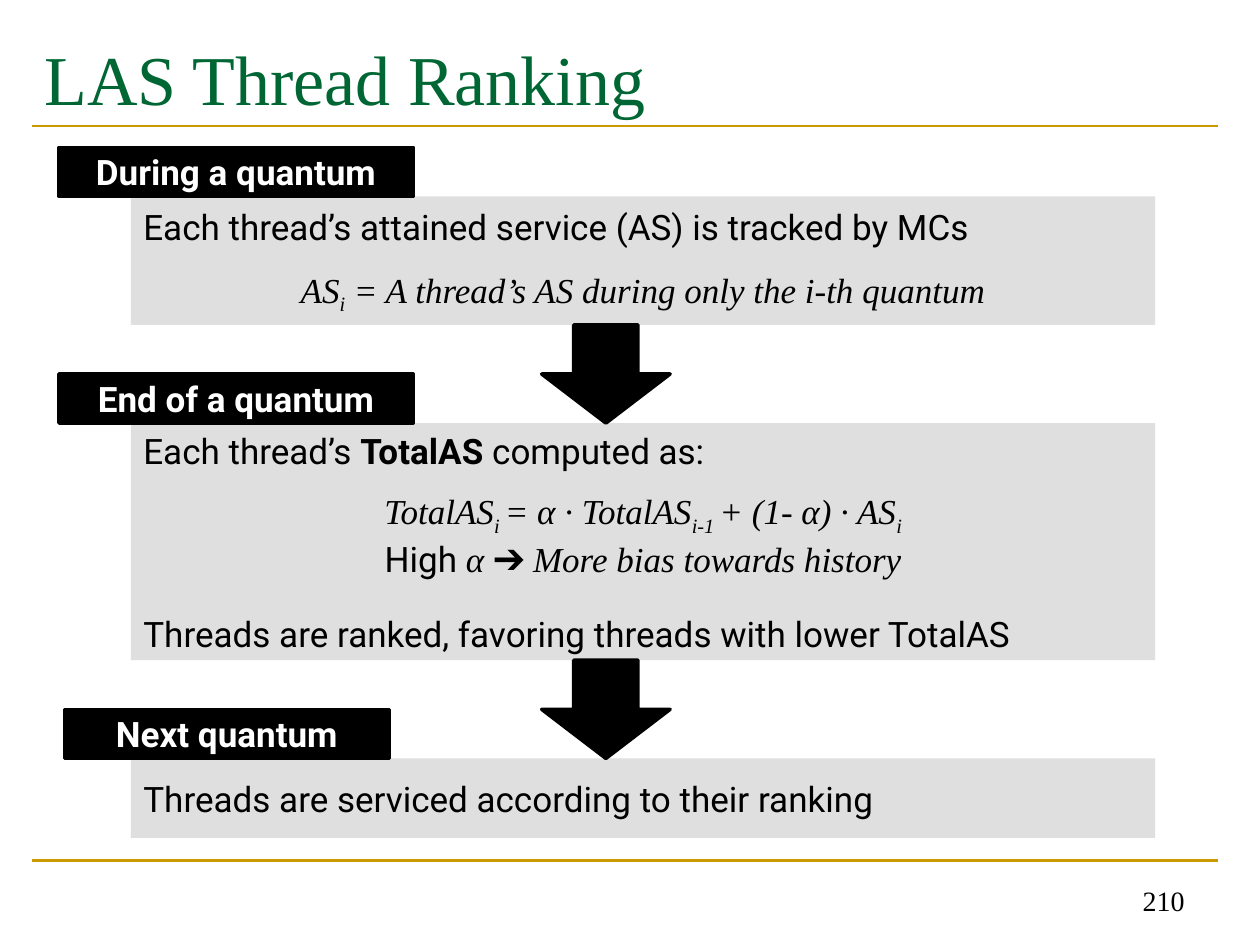
from dataclasses import dataclass

import pptx
import pptx.util
from pptx.dml.color import RGBColor
from pptx.enum.shapes import MSO_CONNECTOR, MSO_SHAPE
from pptx.enum.text import MSO_ANCHOR, PP_ALIGN
from pptx.oxml.ns import qn
from lxml import etree

Cm, Pt = pptx.util.Cm, pptx.util.Pt

BLACK = RGBColor(0x00, 0x00, 0x00)
WHITE = RGBColor(0xFF, 0xFF, 0xFF)
GREY = RGBColor(0xDF, 0xDF, 0xDF)
GREEN = RGBColor(0x00, 0x66, 0x33)
GOLD = RGBColor(0xCC, 0x99, 0x00)

SANS = {"name": "Roboto", "size": Pt(20)}
BOLD = SANS | {"bold": True}
MATH = {"name": "Times New Roman", "size": Pt(20), "italic": True}
SUB = MATH | {"baseline": -25000}

BOX_LEFT, BOX_WIDTH = 2.64, 20.65
LABEL_HEIGHT = 0.99
ARROW_LEFT, ARROW_WIDTH = 10.92, 2.59


@dataclass
class Para:
    runs: list[tuple[str, dict]]
    align: PP_ALIGN = PP_ALIGN.LEFT
    before: float = 0


@dataclass
class Stage:
    label: str
    label_left: float
    label_width: float
    top: float
    height: float
    paras: list[Para]

    @property
    def bottom(self) -> float:
        return self.top + self.height


STAGES = [
    Stage("During a quantum", 1.19, 7.14, 3.96, 2.59, [
        Para([("Each thread’s attained service (AS) is tracked by MCs", SANS)]),
        Para([("AS", MATH), ("i", SUB),
              (" = A thread’s AS during only the i-th quantum", MATH)],
             PP_ALIGN.CENTER, 11.7),
    ]),
    Stage("End of a quantum", 1.19, 7.14, 8.53, 4.78, [
        Para([("Each thread’s ", SANS), ("TotalAS ", BOLD), ("computed as:", SANS)]),
        Para([("TotalAS", MATH), ("i ", SUB), ("= α · TotalAS", MATH), ("i-1 ", SUB),
              ("+ (1- α) · AS", MATH), ("i", SUB)], PP_ALIGN.CENTER, 10.5),
        Para([("High ", SANS), ("α ➔ More bias towards history", MATH)],
             PP_ALIGN.CENTER),
        Para([("Threads are ranked, favoring threads with lower TotalAS", SANS)],
             before=18.8),
    ]),
    Stage("Next quantum", 1.3, 6.55, 15.29, 1.6, [
        Para([("Threads are serviced according to their ranking", SANS)]),
    ]),
]


def write(tf, paras: list[Para], color: RGBColor, anchor: MSO_ANCHOR) -> None:
    tf.word_wrap = True
    tf.vertical_anchor = anchor
    for i, para in enumerate(paras):
        p = tf.paragraphs[0] if i == 0 else tf.add_paragraph()
        p.alignment = para.align
        p.space_before = Pt(para.before)
        for text, fmt in para.runs:
            r = p.add_run()
            r.text = text
            r.font.color.rgb = color
            for key, value in fmt.items():
                if key == "baseline":
                    r._r.get_or_add_rPr().set("baseline", str(value))
                else:
                    setattr(r.font, key, value)


def add_block(s, kind: MSO_SHAPE, left: float, top: float, width: float,
              height: float, fill: RGBColor, outlined: bool = True):
    sp = s.shapes.add_shape(kind, Cm(left), Cm(top), Cm(width), Cm(height))
    sp.shadow.inherit = False
    sp.fill.solid()
    sp.fill.fore_color.rgb = fill
    if outlined:
        sp.line.color.rgb = fill
        sp.line.width = Pt(2)
    else:
        sp.line.fill.background()
    return sp


def add_rule(s, y: float) -> None:
    line = s.shapes.add_connector(MSO_CONNECTOR.STRAIGHT,
                                  Cm(0.64), Cm(y), Cm(24.56), Cm(y))
    line.line.color.rgb = GOLD
    line.line.width = Pt(1.5)
    etree.SubElement(line._element.spPr, qn("a:effectLst"))


def add_title(s, text: str) -> None:
    title = s.shapes.title
    title.left, title.top, title.width, title.height = (
        Cm(0.64), Cm(0.43), Cm(23.93), Cm(2.97))
    title.text_frame.margin_top = Cm(0.28)
    write(title.text_frame,
          [Para([(text, {"name": "Times New Roman", "size": Pt(40)})])],
          GREEN, MSO_ANCHOR.TOP)


def add_page_number(s, text: str) -> None:
    box = s.shapes.add_textbox(Cm(18.21), Cm(17.35), Cm(5.92), Cm(1.27))
    write(box.text_frame,
          [Para([(text, {"name": "Times New Roman", "size": Pt(16)})], PP_ALIGN.RIGHT)],
          BLACK, MSO_ANCHOR.BOTTOM)


def main() -> None:
    prs = pptx.Presentation()
    prs.slide_width, prs.slide_height = Cm(25.4), Cm(19.05)
    s = prs.slides.add_slide(prs.slide_layouts[5])

    for y in (17.35, 2.54):
        add_rule(s, y)
    add_title(s, "LAS Thread Ranking")

    for stage in STAGES:
        box = add_block(s, MSO_SHAPE.RECTANGLE, BOX_LEFT, stage.top,
                        BOX_WIDTH, stage.height, GREY, outlined=False)
        write(box.text_frame, stage.paras, BLACK, MSO_ANCHOR.MIDDLE)
    for stage in STAGES:
        label = add_block(s, MSO_SHAPE.RECTANGLE, stage.label_left,
                          stage.top - LABEL_HEIGHT, stage.label_width,
                          LABEL_HEIGHT, BLACK)
        write(label.text_frame, [Para([(stage.label, BOLD)], PP_ALIGN.CENTER)],
              WHITE, MSO_ANCHOR.MIDDLE)
    for upper, lower in zip(STAGES, STAGES[1:]):
        add_block(s, MSO_SHAPE.DOWN_ARROW, ARROW_LEFT, upper.bottom,
                  ARROW_WIDTH, lower.top - upper.bottom, BLACK)

    add_page_number(s, "210")
    prs.save("out.pptx")


if __name__ == "__main__":
    main()
